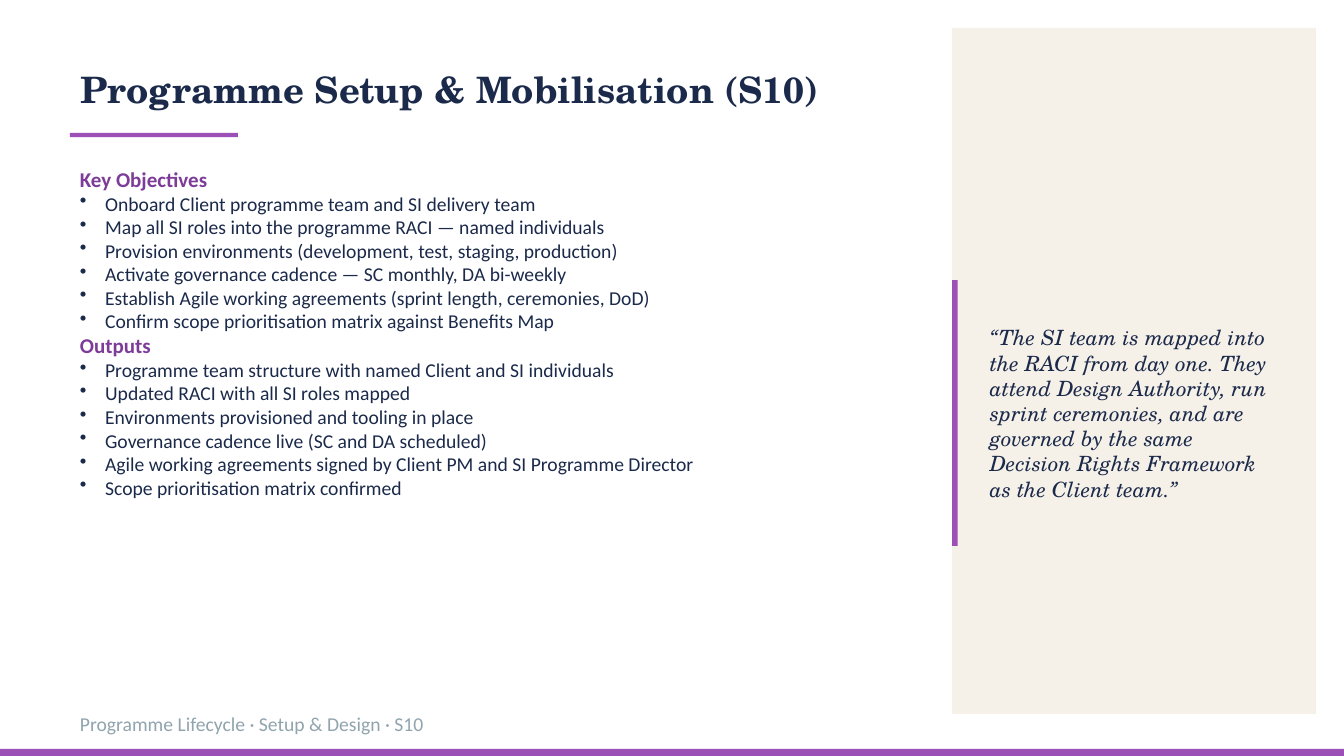
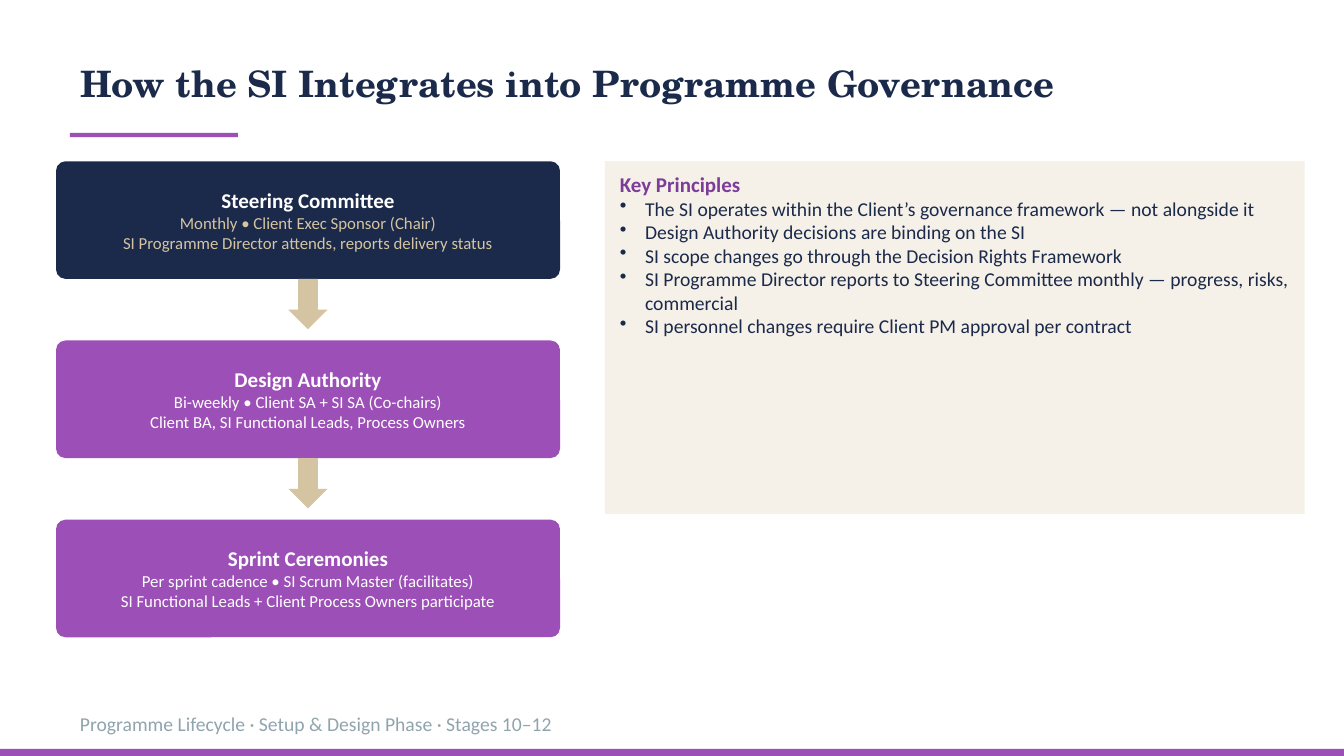
import pptx
import pptx.dml.color
import pptx.enum.shapes
import pptx.enum.text
import pptx.oxml.ns
import pptx.util
from lxml import etree

RGB = pptx.dml.color.RGBColor
KIND = pptx.enum.shapes.MSO_SHAPE
ANCHOR = pptx.enum.text.MSO_ANCHOR
ALIGN = pptx.enum.text.PP_ALIGN
FIT = pptx.enum.text.MSO_AUTO_SIZE

# Colours
NAVY = RGB(0x1B, 0x2A, 0x4A)
PURPLE = RGB(0x9C, 0x4F, 0xB6)
PLUM = RGB(0x7D, 0x3C, 0x98)
CREAM = RGB(0xF5, 0xF0, 0xE8)
SAND = RGB(0xD5, 0xC4, 0xA1)
GREY = RGB(0x90, 0xA4, 0xAE)
WHITE = RGB(0xFF, 0xFF, 0xFF)

# Text styles: size, font, colour, bold, italic
SERIF, SANS = "TeX Gyre Schola", "Calibri"
TITLE = (26, SERIF, NAVY, True, False)
QUOTE = (15, SERIF, NAVY, False, True)
HEAD = (15, SANS, PLUM, True, False)
ITEM = (14, SANS, NAVY, False, False)
FOOT = (14, SANS, GREY, False, False)
NAME = (15, SANS, WHITE, True, False)

# Page and its grid of 24 columns by 27 rows
deck = pptx.Presentation()
deck.slide_width = pptx.util.Inches(13.33)
deck.slide_height = pptx.util.Inches(7.5)
COL = deck.slide_width / 24
ROW = deck.slide_height / 27
EDGE = 1.25
TOP = 5.76


def block(slide, kind, x, y, w, h, fill=None):
    """Add a filled shape, or a text box if kind is None, in grid units."""
    spot = [int(x * COL), int(y * ROW), int(w * COL), int(h * ROW)]
    if kind is None:
        box = slide.shapes.add_textbox(*spot)
    else:
        box = slide.shapes.add_shape(kind, *spot)
        box.shadow.inherit = False
        box.fill.solid()
        box.fill.fore_color.rgb = fill
        box.line.fill.background()
    box.text_frame.word_wrap = True
    return box


def write(box, lines, align=ALIGN.LEFT, anchor=ANCHOR.TOP):
    """Write (text, style) lines, one paragraph each; items get bullets."""
    frame = box.text_frame
    frame.vertical_anchor = anchor
    for i, (text, style) in enumerate(lines):
        para = frame.paragraphs[0] if i == 0 else frame.add_paragraph()
        para.alignment = align
        if style is ITEM:
            props = para._p.get_or_add_pPr()
            step = pptx.util.Inches(0.25)
            props.set("marL", str(step))
            props.set("indent", str(-step))
            mark = etree.SubElement(props, pptx.oxml.ns.qn("a:buChar"))
            mark.set("char", "•")
        run = para.add_run()
        run.text = text
        font = run.font
        font.size = pptx.util.Pt(style[0])
        font.name = style[1]
        font.color.rgb = style[2]
        font.bold, font.italic = style[3:]


# Shared frame: title, accent rule, footer and bottom band
heads = [
    ("Programme Setup & Mobilisation (S10)", 2.23, 15,
     "Programme Lifecycle · Setup & Design · S10"),
    ("How the SI Integrates into Programme Governance", 2, 22,
     "Programme Lifecycle · Setup & Design Phase · Stages 10–12"),
]
slides = []
for text, y, w, foot in heads:
    slide = deck.slides.add_slide(deck.slide_layouts[5])
    title = slide.shapes.title
    title.left, title.top = int(EDGE * COL), int(y * ROW)
    title.width, title.height = int(w * COL), int(2 * ROW)
    title.text_frame.auto_size = FIT.SHAPE_TO_FIT_TEXT
    write(title, [(text, TITLE)])
    block(slide, KIND.RECTANGLE, EDGE, 4.75, 3, 0.15, PURPLE)
    note = block(slide, None, EDGE, 25.24, 15, 1.2)
    note.text_frame.auto_size = FIT.SHAPE_TO_FIT_TEXT
    write(note, [(foot, FOOT)])
    block(slide, KIND.RECTANGLE, 0, 26.75, 24, 0.25, PURPLE)
    slides.append(slide)
setup, rule = slides

# Slide 1: objectives and outputs
body = block(setup, None, EDGE, TOP, 15, 20)
write(body, [
    ("Key Objectives", HEAD),
    ("Onboard Client programme team and SI delivery team", ITEM),
    ("Map all SI roles into the programme RACI — named individuals", ITEM),
    ("Provision environments (development, test, staging, production)", ITEM),
    ("Activate governance cadence — SC monthly, DA bi-weekly", ITEM),
    ("Establish Agile working agreements (sprint length, ceremonies, DoD)", ITEM),
    ("Confirm scope prioritisation matrix against Benefits Map", ITEM),
    ("Outputs", HEAD),
    ("Programme team structure with named Client and SI individuals", ITEM),
    ("Updated RACI with all SI roles mapped", ITEM),
    ("Environments provisioned and tooling in place", ITEM),
    ("Governance cadence live (SC and DA scheduled)", ITEM),
    ("Agile working agreements signed by Client PM and SI Programme Director", ITEM),
    ("Scope prioritisation matrix confirmed", ITEM),
])

# Slide 1: quote panel
block(setup, KIND.RECTANGLE, 17, 1, 6.5, 24.5, CREAM)
block(setup, KIND.RECTANGLE, 17, 10, 0.1, 9.5, PURPLE)
quote = block(setup, None, 17.5, 10, 5.5, 9.5)
write(quote, [(
    "“The SI team is mapped into the RACI from day one. They attend Design "
    "Authority, run sprint ceremonies, and are governed by the same Decision "
    "Rights Framework as the Client team.”", QUOTE)], anchor=ANCHOR.MIDDLE)

# Slide 2: chain of forums, with an arrow between each pair
forums = [
    (NAVY, SAND, "Steering Committee", "Monthly • Client Exec Sponsor (Chair)",
     "SI Programme Director attends, reports delivery status"),
    (PURPLE, WHITE, "Design Authority", "Bi-weekly • Client SA + SI SA (Co-chairs)",
     "Client BA, SI Functional Leads, Process Owners"),
    (PURPLE, WHITE, "Sprint Ceremonies",
     "Per sprint cadence • SI Scrum Master (facilitates)",
     "SI Functional Leads + Client Process Owners participate"),
]
LEFT, WIDE, TALL, PITCH, TIP = 1, 9, 4.2, 6.4, 0.7
for i, (fill, ink, name, *facts) in enumerate(forums):
    y = TOP + i * PITCH
    if i:
        block(rule, KIND.DOWN_ARROW, LEFT + (WIDE - TIP) / 2,
              y - PITCH + TALL, TIP, 1.8, SAND)
    card = block(rule, KIND.ROUNDED_RECTANGLE, LEFT, y, WIDE, TALL, fill)
    card.adjustments[0] = 0.08
    small = (12, SANS, ink, False, False)
    write(card, [(name, NAME)] + [(fact, small) for fact in facts],
          ALIGN.CENTER, ANCHOR.MIDDLE)

# Slide 2: principles panel
panel = block(rule, KIND.RECTANGLE, 10.8, TOP, 12.5, 12.6, CREAM)
frame = panel.text_frame
frame.margin_left = frame.margin_right = pptx.util.Inches(0.15)
frame.margin_top = frame.margin_bottom = pptx.util.Inches(0.1)
write(panel, [
    ("Key Principles", HEAD),
    ("The SI operates within the Client’s governance framework — not alongside it", ITEM),
    ("Design Authority decisions are binding on the SI", ITEM),
    ("SI scope changes go through the Decision Rights Framework", ITEM),
    ("SI Programme Director reports to Steering Committee monthly — progress, "
     "risks, commercial", ITEM),
    ("SI personnel changes require Client PM approval per contract", ITEM),
])

deck.save("out.pptx")
